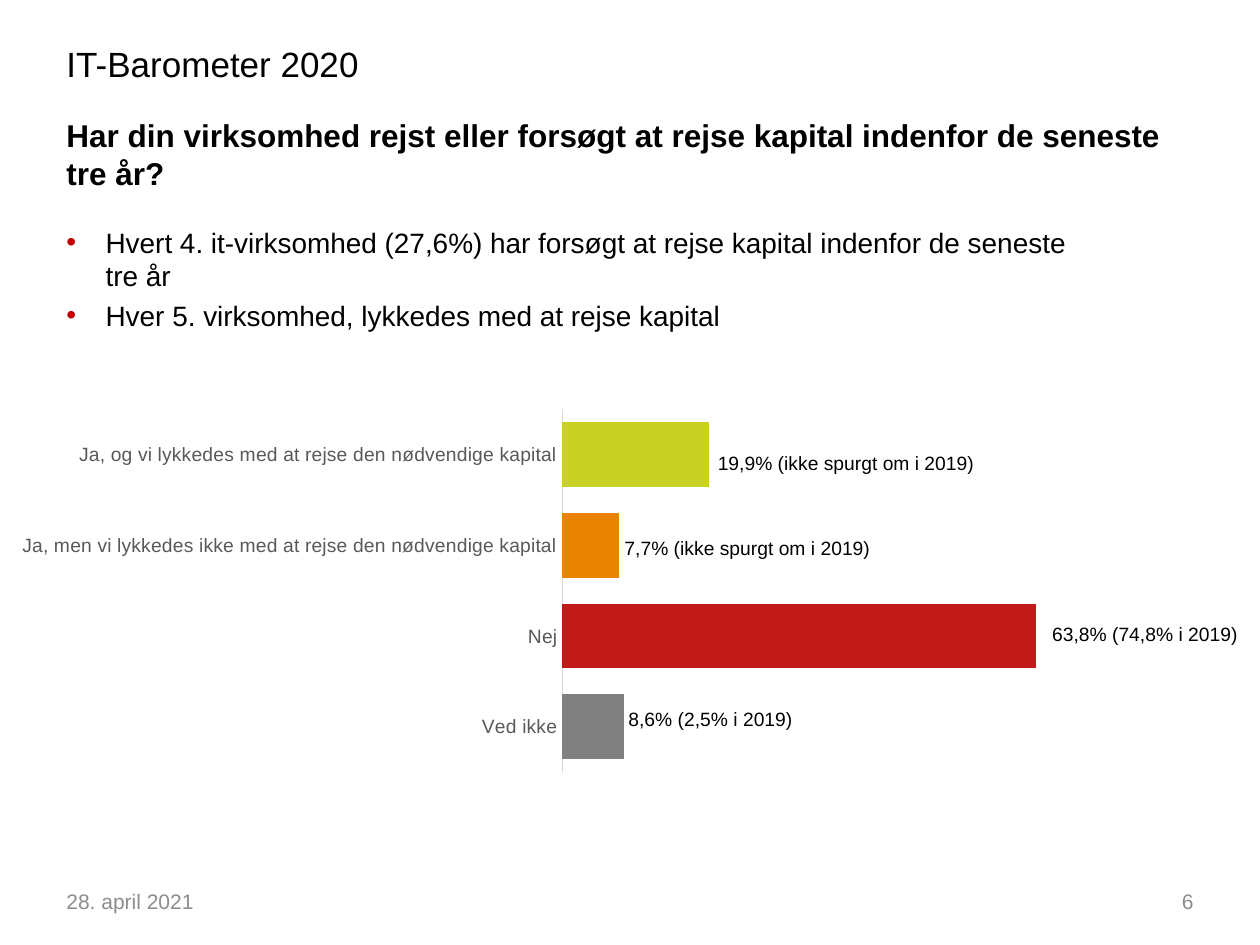
from dataclasses import dataclass

from lxml import etree
from pptx import Presentation
from pptx.chart.data import CategoryChartData
from pptx.dml.color import RGBColor
from pptx.enum.chart import XL_CHART_TYPE as ChartType, XL_TICK_MARK as TickMark
from pptx.enum.text import (MSO_ANCHOR as Anchor, MSO_AUTO_SIZE as AutoSize,
                            PP_ALIGN as Align)
from pptx.oxml.ns import qn
from pptx.util import Cm, Pt


@dataclass(frozen=True)
class Theme:
    font: str = "Arial"
    text: str = "000000"
    muted: str = "8C8C8C"
    bullet: str = "C00000"
    axis_text: str = "595959"
    axis_line: str = "D9D9D9"
    heading_size: int = 20
    title_size: int = 18
    body_size: int = 16
    footer_size: int = 12
    label_size: int = 11


@dataclass(frozen=True)
class Answer:
    """One bar, with its result label; x and w place the label in cm."""
    name: str
    value: int
    color: str
    label: str
    x: float
    w: float


T = Theme()
MARGIN = 1.09
LABEL_TOP, LABEL_PITCH = 8.97, 1.72
FOOTER_TOP, FOOTER_W, FOOTER_H = 17.65, 5.92, 1.02

ANSWERS = [
    Answer("Ja, og vi lykkedes med at rejse den nødvendige kapital", 31, "C8D124",
           "19,9% (ikke spurgt om i 2019)", 14.22, 5.72),
    Answer("Ja, men vi lykkedes ikke med at rejse den nødvendige kapital", 12, "E98300",
           "7,7% (ikke spurgt om i 2019)", 12.34, 5.49),
    Answer("Nej", 100, "C21919", "63,8% (74,8% i 2019)", 20.96, 4.27),
    Answer("Ved ikke", 13, "808080", "8,6% (2,5% i 2019)", 12.42, 3.84),
]
BULLETS = [
    "Hvert 4. it-virksomhed (27,6%) har forsøgt at rejse kapital indenfor de seneste tre år",
    "Hver 5. virksomhed, lykkedes med at rejse kapital",
]


def rgb(color: str) -> RGBColor:
    return RGBColor.from_string(color)


def style(font, size: int, color: str = T.text, bold: bool = False) -> None:
    font.name, font.size, font.bold = T.font, Pt(size), bold
    font.color.rgb = rgb(color)


def add_text(s, text: str, x: float, y: float, w: float, h: float, size: int,
             color: str = T.text, bold: bool = False, wrap: bool = True,
             anchor=Anchor.TOP, align=Align.LEFT):
    tf = s.shapes.add_textbox(Cm(x), Cm(y), Cm(w), Cm(h)).text_frame
    tf.text = text
    tf.word_wrap = wrap
    tf.auto_size = AutoSize.NONE if wrap else AutoSize.SHAPE_TO_FIT_TEXT
    tf.vertical_anchor = anchor
    for p in tf.paragraphs:
        p.alignment = align
        for r in p.runs:
            style(r.font, size, color, bold)
    return tf


def add_bullet(p) -> None:
    pPr = p._p.get_or_add_pPr()
    pPr.set("marL", str(Cm(0.79)))
    pPr.set("indent", str(-Cm(0.79)))
    color = etree.SubElement(pPr, qn("a:buClr"))
    etree.SubElement(color, qn("a:srgbClr"), val=T.bullet)
    etree.SubElement(pPr, qn("a:buFont"), typeface=T.font)
    etree.SubElement(pPr, qn("a:buChar"), char="•")


def place_plot(chart, x: float, y: float, w: float, h: float) -> None:
    """Fix the inner plot area, in fractions of the chart frame."""
    area = chart._chartSpace.chart.plotArea
    for old in area.findall(qn("c:layout")):
        area.remove(old)
    layout = etree.Element(qn("c:layout"))
    manual = etree.SubElement(layout, qn("c:manualLayout"))
    settings = [("layoutTarget", "inner"), ("xMode", "edge"), ("yMode", "edge"),
                ("x", x), ("y", y), ("w", w), ("h", h)]
    for tag, val in settings:
        etree.SubElement(manual, qn(f"c:{tag}"), val=str(val))
    area.insert(0, layout)


def add_answer_chart(s, answers: list[Answer]) -> None:
    bars = answers[::-1]  # a bar chart counts from the bottom
    data = CategoryChartData()
    data.categories = [a.name for a in bars]
    data.add_series("Series 1", [a.value for a in bars])
    chart = s.shapes.add_chart(ChartType.BAR_CLUSTERED, Cm(0), Cm(8.1),
                               Cm(22.23), Cm(7.62), data).chart
    chart.has_legend = chart.has_title = False
    style(chart.font, 10)
    place_plot(chart, 0.51, 0.02, 0.43, 0.96)

    plot = chart.plots[0]
    plot.gap_width, plot.overlap, plot.vary_by_categories = 40, -25, False
    for i, a in enumerate(bars):
        fill = plot.series[0].points[i].format.fill
        fill.solid()
        fill.fore_color.rgb = rgb(a.color)

    cat = chart.category_axis
    cat.major_tick_mark = cat.minor_tick_mark = TickMark.NONE
    style(cat.tick_labels.font, T.label_size, T.axis_text)
    cat.format.line.color.rgb = rgb(T.axis_line)
    cat.format.line.width = Pt(0.75)
    val = chart.value_axis
    val.minimum_scale, val.maximum_scale = 0, 100
    val.has_major_gridlines = val.visible = False


def main() -> None:
    prs = Presentation()
    prs.slide_width, prs.slide_height = Cm(25.4), Cm(19.05)
    s = prs.slides.add_slide(prs.slide_layouts[6])

    add_answer_chart(s, ANSWERS)
    add_text(s, "IT-Barometer 2020", MARGIN, 0.74, 8.05, 1.02, T.heading_size)
    add_text(s, "Har din virksomhed rejst eller forsøgt at rejse kapital "
             "indenfor de seneste tre år?",
             MARGIN, 2.21, 22.86, 1.4, T.title_size, bold=True)

    tf = add_text(s, "\n".join(BULLETS), MARGIN, 4.42, 20.9, 2.36, T.body_size)
    for i, p in enumerate(tf.paragraphs):
        if i:
            p.space_before = Pt(3.2)
        add_bullet(p)

    for i, a in enumerate(ANSWERS):
        add_text(s, a.label, a.x, LABEL_TOP + i * LABEL_PITCH, a.w, 0.74,
                 T.label_size, wrap=False)

    footers = [("28. april 2021", MARGIN, Align.LEFT),
               ("6", 25.4 - MARGIN - FOOTER_W, Align.RIGHT)]
    for text, x, align in footers:
        add_text(s, text, x, FOOTER_TOP, FOOTER_W, FOOTER_H, T.footer_size,
                 T.muted, anchor=Anchor.MIDDLE, align=align)

    prs.save("out.pptx")


if __name__ == "__main__":
    main()
